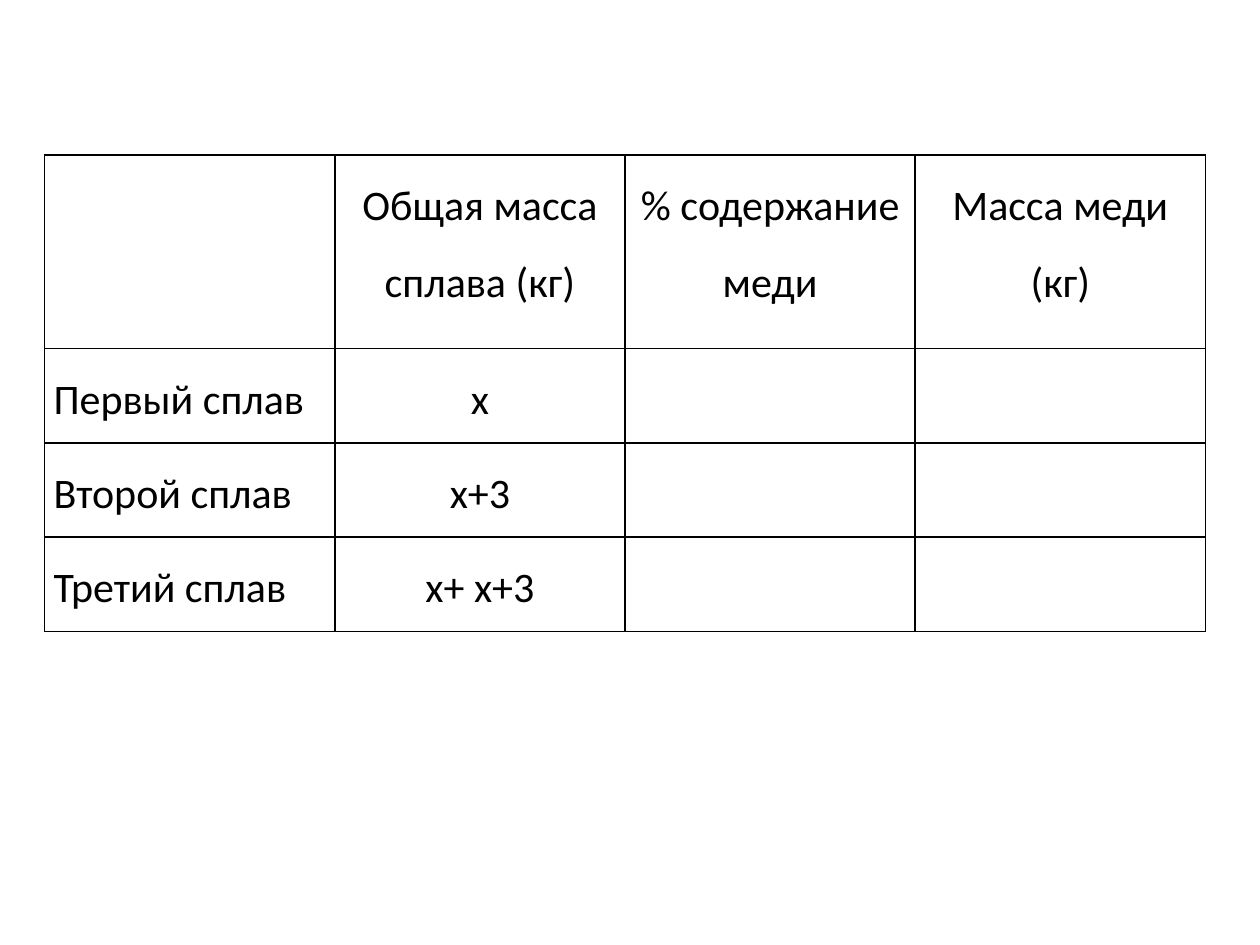
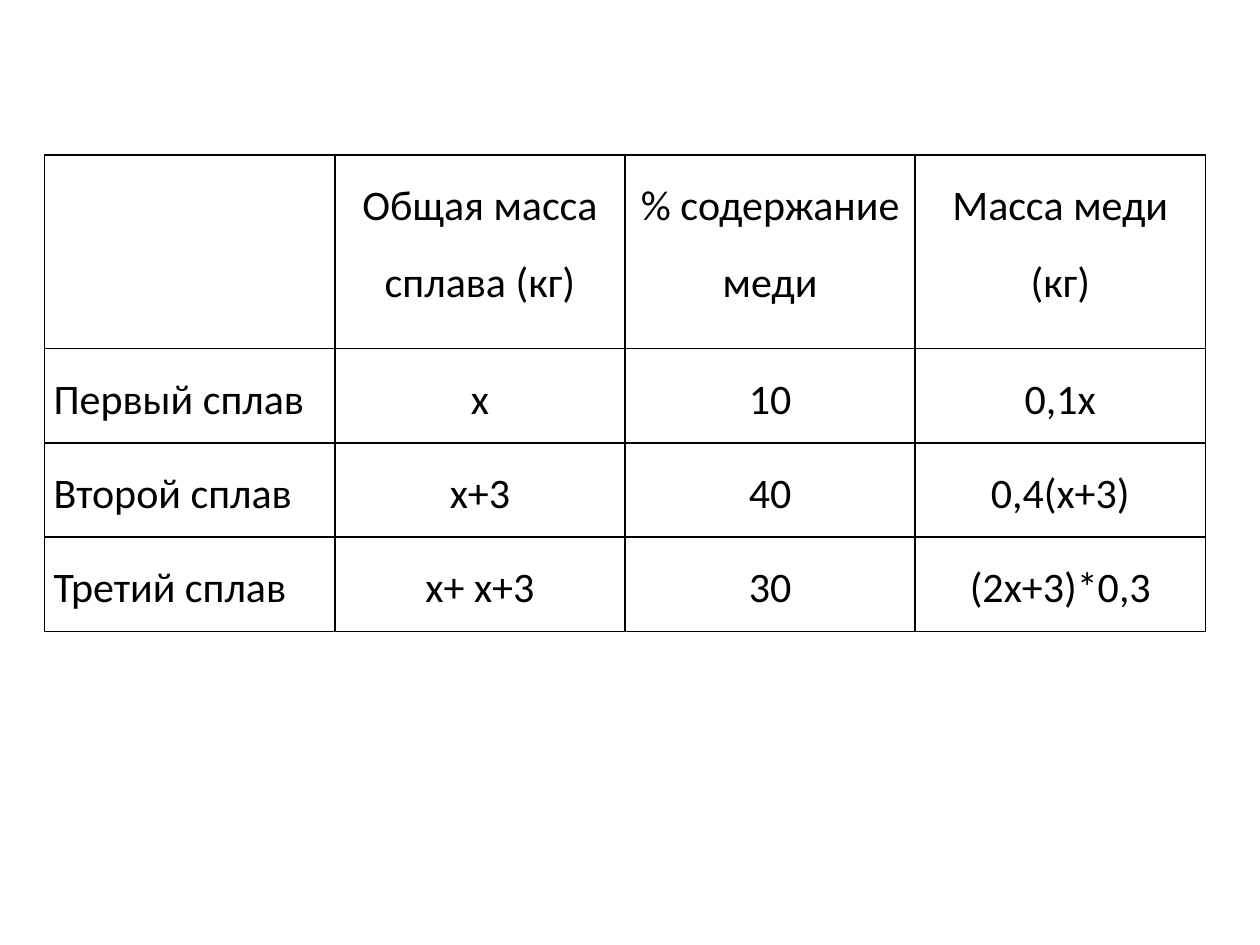
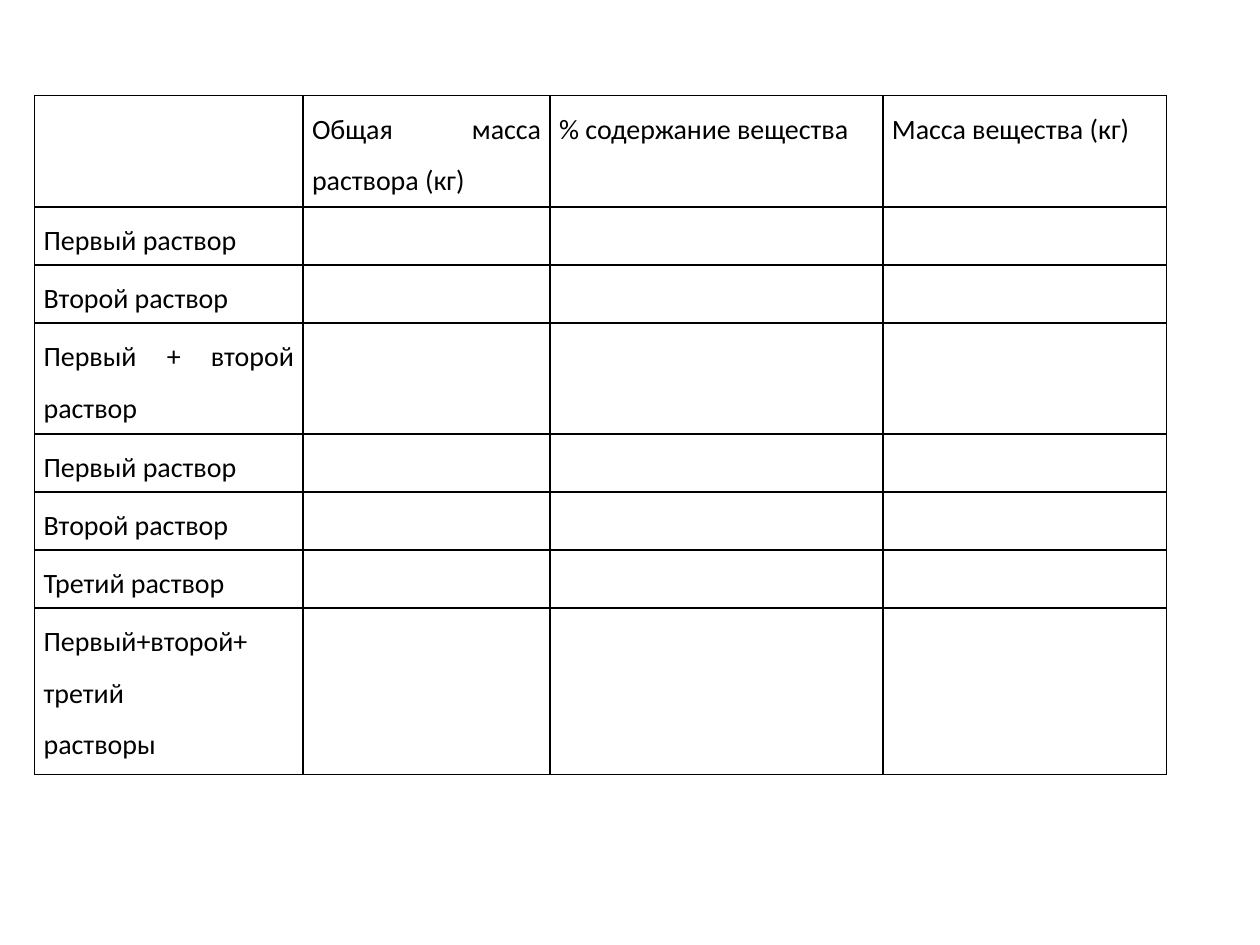
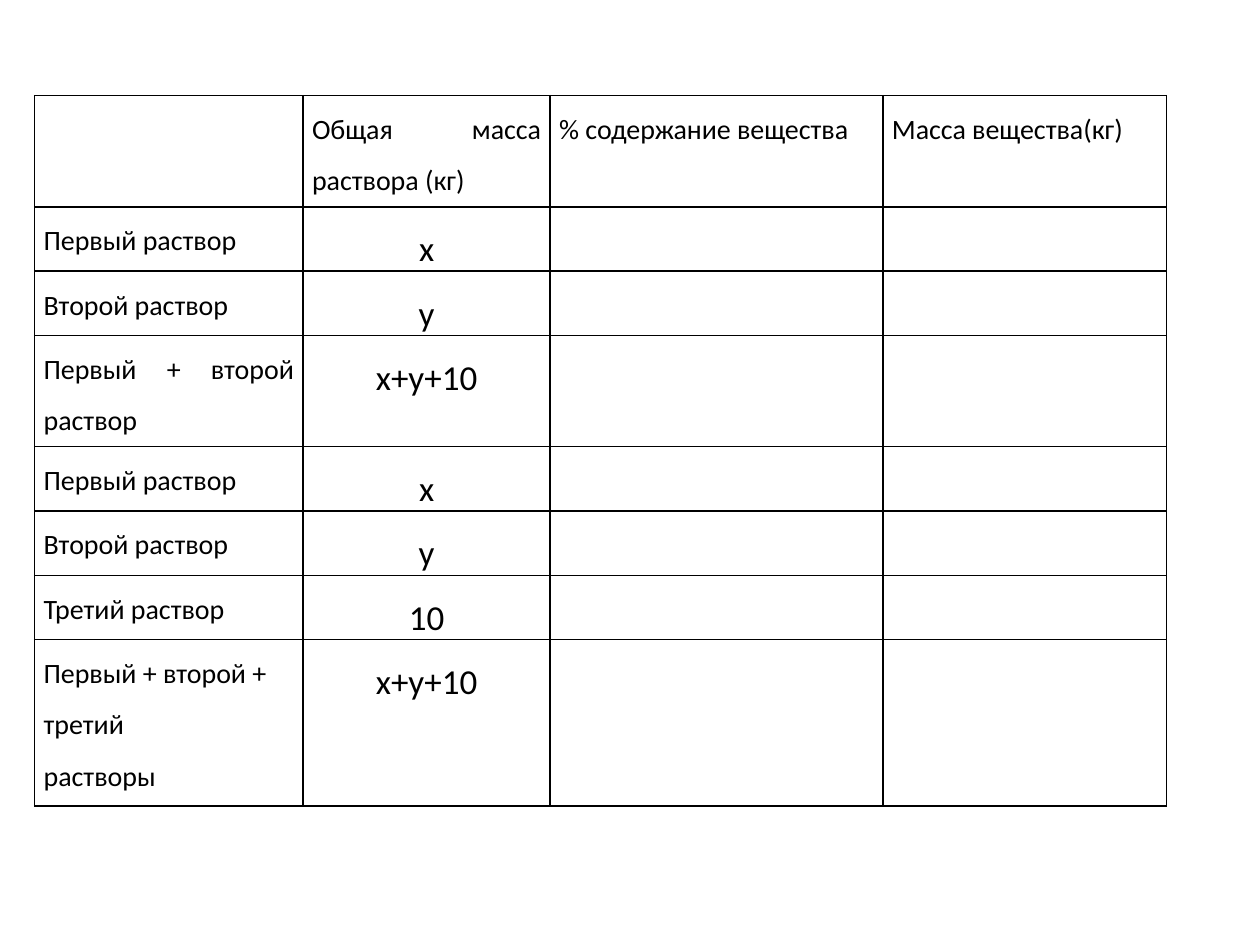
from pptx import Presentation
from pptx.dml.color import RGBColor
from pptx.enum.text import PP_ALIGN as AL
from pptx.oxml import parse_xml
from pptx.oxml.ns import nsdecls
from pptx.util import Cm, Pt

FONT, INK = "Calibri", "000000"


def write(cell, text, size=24, align=AL.CENTER, color=INK):
    """Fill a cell with one paragraph per line of text."""
    tf = cell.text_frame
    for i, line in enumerate(text.split("\n")):
        p = tf.add_paragraph() if i else tf.paragraphs[0]
        p.alignment, p.line_spacing = align, 1.5
        r = p.add_run()
        r.text = line
        r.font.name, r.font.size = FONT, Pt(size)
        r.font.color.rgb = RGBColor.from_string(color)


def add_grid(slide, left, top, widths, heights):
    """Add an unfilled table with thin black rules."""
    shape = slide.shapes.add_table(len(heights), len(widths), Cm(left), Cm(top),
                                   Cm(sum(widths)), Cm(sum(heights)))
    table = shape.table
    table.first_row = table.horz_banding = False
    for col, width in zip(table.columns, widths):
        col.width = Cm(width)
    for row, height in zip(table.rows, heights):
        row.height = Cm(height)
    for cell in table.iter_cells():
        cell.margin_left = cell.margin_right = Cm(0.18)
        cell.margin_top = cell.margin_bottom = 0
        tcPr = cell._tc.get_or_add_tcPr()
        for side in ("lnL", "lnR", "lnT", "lnB"):
            tcPr.append(parse_xml(
                f'<a:{side} {nsdecls("a")} w="{Pt(1)}"><a:solidFill>'
                f'<a:srgbClr val="{INK}"/></a:solidFill></a:{side}>'))
        cell.fill.background()
    return table


prs = Presentation()
prs.slide_width, prs.slide_height = Cm(25.4), Cm(19.05)
blank = prs.slide_layouts[6]

# Slides 1 and 2: alloys, first without and then with the copper columns
alloy_head = ["", "Общая масса сплава (кг)", "% содержание меди", "Масса меди\n(кг)"]
alloys = [
    ["Первый сплав", "х", "10", "0,1х"],
    ["Второй сплав", "х+3", "40", "0,4(х+3)"],
    ["Третий сплав", "х+ х+3", "30", "(2х+3)*0,3"],
]
for shown in (2, 4):
    s = prs.slides.add_slide(blank)
    table = add_grid(s, 0.9, 3.12, [5.85] * 4, [3.91] + [1.9] * 3)
    rows = [alloy_head] + [row[:shown] for row in alloys]
    for i, row in enumerate(rows):
        for j, text in enumerate(row):
            if text:
                write(table.cell(i, j), text, align=AL.CENTER if j else AL.JUSTIFY)

# Slides 3 and 4: solutions, first empty and then with the masses
solutions = ["Первый раствор", "Второй раствор", "Первый + второй раствор",
             "Первый раствор", "Второй раствор", "Третий раствор"]
masses = ["х", "у", "х+у+10", "х", "у", "10", "х+у+10"]
variants = [
    ("Масса вещества (кг)", "Первый+второй+", []),
    ("Масса вещества(кг)", "Первый + второй +", masses),
]
for mass_head, total, values in variants:
    s = prs.slides.add_slide(blank)
    table = add_grid(s, 0.7, 1.93, [5.41, 4.98, 6.71, 5.72],
                     [2.24, 1.17, 1.17, 2.24, 1.17, 1.17, 1.17, 3.35])
    heads = ["Общая масса раствора (кг)", "% содержание вещества", mass_head]
    for j, text in enumerate(heads, 1):
        write(table.cell(0, j), text, size=16, align=AL.JUSTIFY)
    for i, text in enumerate(solutions + [total + "\nтретий\nрастворы"], 1):
        write(table.cell(i, 0), text, size=16, align=AL.JUSTIFY)
    for i, text in enumerate(values, 1):
        write(table.cell(i, 1), text, size=20)

prs.save("out.pptx")
